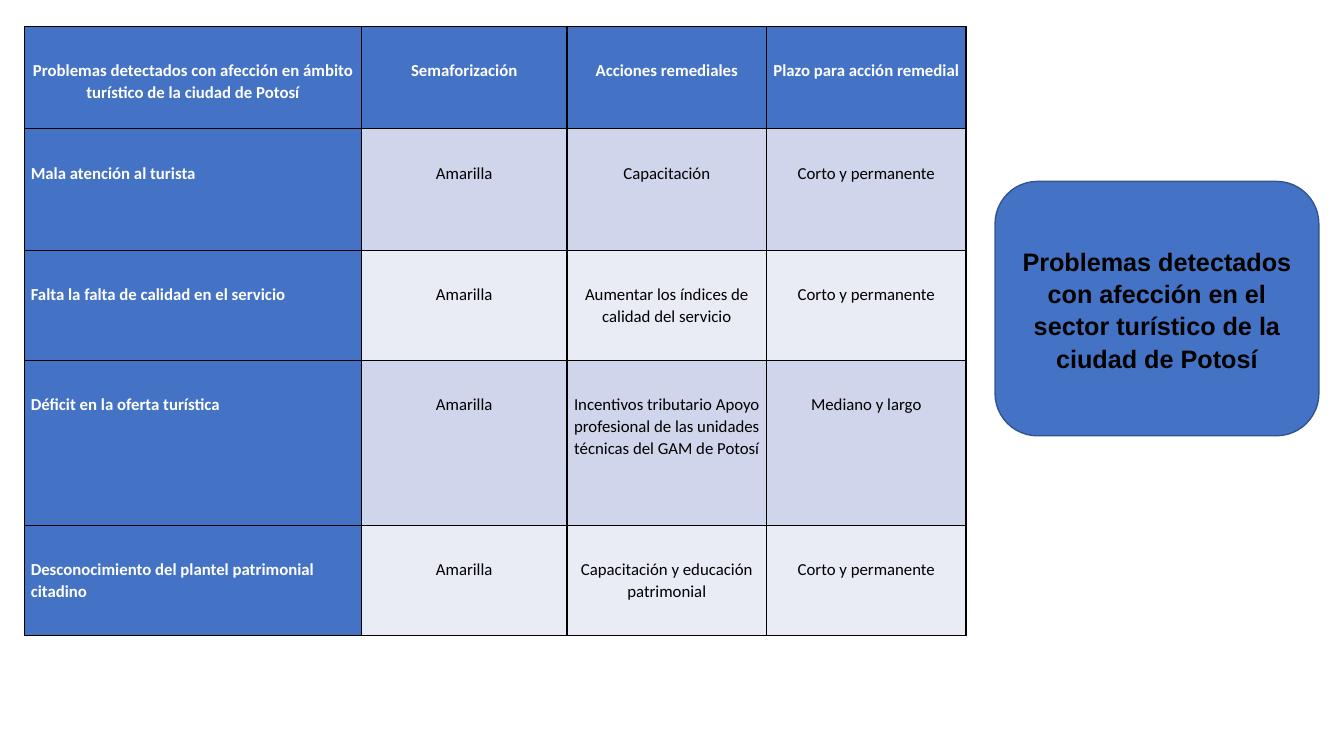
from lxml.etree import SubElement
from pptx import Presentation
from pptx.dml.color import RGBColor
from pptx.enum.shapes import MSO_SHAPE
from pptx.enum.text import MSO_ANCHOR, PP_ALIGN
from pptx.oxml.ns import qn
from pptx.util import Pt

BLUE, OUTLINE, BLACK, WHITE = "4472C4", "325491", "000000", "FFFFFF"
BANDS = ["CFD5EA", "E9EBF5"]
COLUMN_WIDTHS = [240.5, 146.9, 142.5, 142.5]
ROW_HEIGHTS = [73.2, 86.9, 78.6, 117.9, 78.6]
PROBLEMS = [
    ["Problemas detectados con afección en ámbito turístico de la ciudad de Potosí",
     "Semaforización", "Acciones remediales", "Plazo para acción remedial"],
    ["Mala atención al turista", "Amarilla", "Capacitación", "Corto y permanente"],
    ["Falta la falta de calidad en el servicio", "Amarilla",
     "Aumentar los índices de calidad del servicio", "Corto y permanente"],
    ["Déficit en la oferta turística", "Amarilla",
     "Incentivos tributario Apoyo profesional de las unidades técnicas del GAM de Potosí",
     "Mediano y largo"],
    ["Desconocimiento del plantel patrimonial citadino", "Amarilla",
     "Capacitación y educación patrimonial", "Corto y permanente"],
]
CELL_FORMAT = {"margin_left": Pt(4.3), "margin_right": Pt(4.3), "margin_top": Pt(23.6),
               "margin_bottom": Pt(0), "vertical_anchor": MSO_ANCHOR.TOP}


def color(value):
    """Turn a hex string into a colour."""
    return RGBColor.from_string(value)


def apply(target, values):
    """Set every attribute named in the format values."""
    for name, value in values.items():
        setattr(target, name, value)


def write(frame, text, align, ink, font):
    """Write one formatted paragraph into a text frame."""
    frame.word_wrap = True
    paragraph = frame.paragraphs[0]
    run = paragraph.add_run()
    run.text = text
    apply(paragraph, {"alignment": align, "line_spacing": 1.07})
    apply(run.font, font)
    run.font.color.rgb = color(ink)


def draw_borders(cell):
    """Rule all four sides of a cell in black."""
    properties = cell._tc.get_or_add_tcPr()
    for side in ("a:lnL", "a:lnR", "a:lnT", "a:lnB"):
        border = SubElement(properties, qn(side), w=str(Pt(1)))
        SubElement(SubElement(border, qn("a:solidFill")), qn("a:srgbClr"), val=BLACK)


def add_problem_table(slide, left, top):
    """Place the table of problems, actions and terms."""
    table = slide.shapes.add_table(
        len(PROBLEMS), len(COLUMN_WIDTHS), Pt(left), Pt(top),
        Pt(sum(COLUMN_WIDTHS)), Pt(sum(ROW_HEIGHTS))).table
    for column, width in zip(table.columns, COLUMN_WIDTHS):
        column.width = Pt(width)
    for row, height in zip(table.rows, ROW_HEIGHTS):
        row.height = Pt(height)
    for r, problem in enumerate(PROBLEMS):
        for c, text in enumerate(problem):
            cell = table.cell(r, c)
            heading = r == 0 or c == 0
            apply(cell, CELL_FORMAT)
            draw_borders(cell)
            cell.fill.solid()
            cell.fill.fore_color.rgb = color(BLUE if heading else BANDS[(r - 1) % 2])
            write(cell.text_frame, text,
                  PP_ALIGN.LEFT if r and c == 0 else PP_ALIGN.CENTER,
                  WHITE if heading else BLACK,
                  {"name": "Calibri", "size": Pt(12), "bold": heading})


def add_topic(slide, left, top, width, height):
    """Place the rounded box that names the topic."""
    topic = slide.shapes.add_shape(
        MSO_SHAPE.ROUNDED_RECTANGLE, Pt(left), Pt(top), Pt(width), Pt(height))
    topic.shadow.inherit = False
    topic.fill.solid()
    topic.fill.fore_color.rgb = color(BLUE)
    topic.line.color.rgb = color(OUTLINE)
    topic.line.width = Pt(1)
    topic.text_frame.vertical_anchor = MSO_ANCHOR.MIDDLE
    write(topic.text_frame,
          "Problemas detectados con afección en el sector turístico de la ciudad de Potosí",
          PP_ALIGN.CENTER, BLACK, {"name": "Arial", "size": Pt(18), "bold": True})


def main():
    """Build and save the slide."""
    presentation = Presentation()
    apply(presentation, {"slide_width": Pt(960), "slide_height": Pt(540)})
    slide = presentation.slides.add_slide(presentation.slide_layouts[6])
    add_problem_table(slide, 17.7, 18.7)
    add_topic(slide, 710.8, 129.6, 231.3, 181.7)
    presentation.save("out.pptx")


if __name__ == "__main__":
    main()
